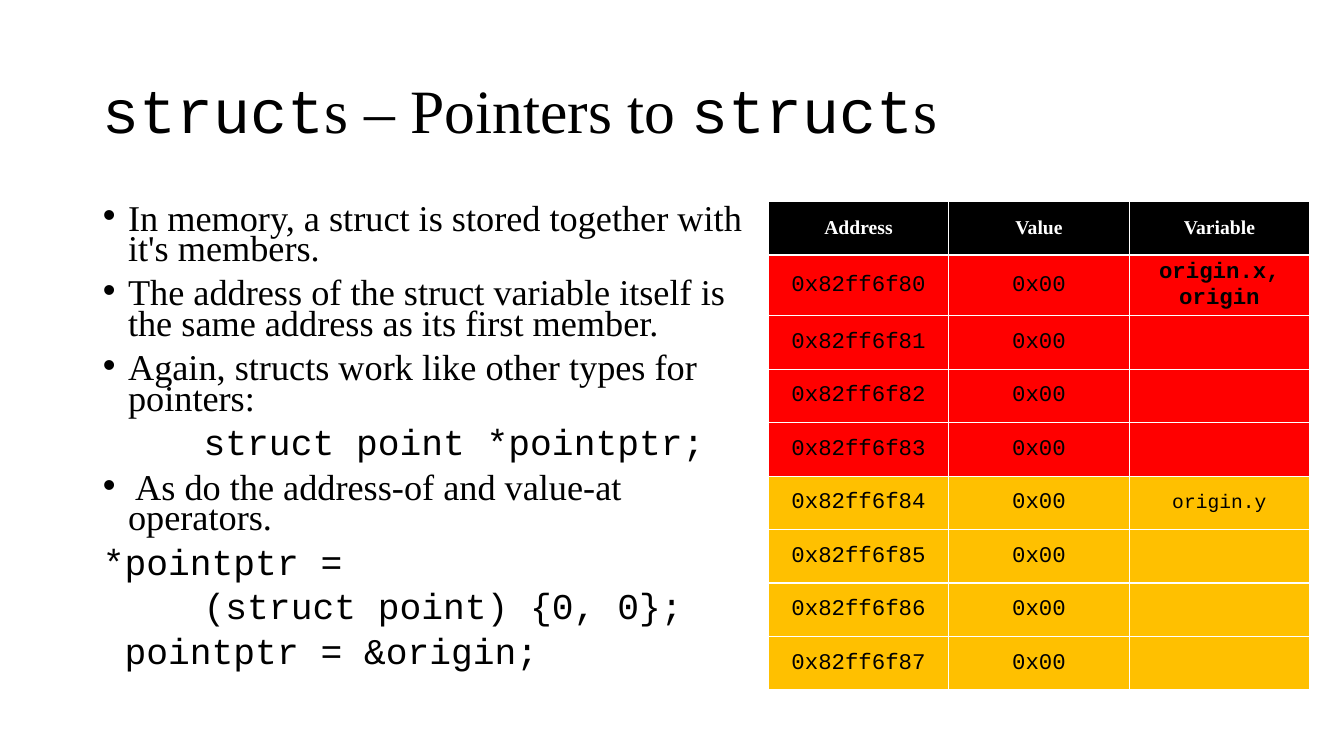
from dataclasses import dataclass

from lxml.etree import SubElement
from pptx import Presentation
from pptx.dml.color import RGBColor
from pptx.enum.text import MSO_ANCHOR, MSO_AUTO_SIZE, PP_ALIGN
from pptx.oxml.ns import qn
from pptx.util import Inches, Pt


@dataclass(frozen=True)
class Theme:
    serif: str = "Times New Roman"
    mono: str = "Courier New"
    black: RGBColor = RGBColor(0, 0, 0)
    white: RGBColor = RGBColor(255, 255, 255)
    red: RGBColor = RGBColor(255, 0, 0)
    amber: RGBColor = RGBColor(255, 192, 0)
    title_size: float = 44
    body_size: float = 25.9
    cell_size: float = 16
    label_size: float = 14


theme = Theme()


def write(paragraph, text, font=theme.mono, size=theme.cell_size, color=theme.black, bold=False):
    run = paragraph.add_run()
    run.text = text
    run.font.name = font
    run.font.size = Pt(size)
    run.font.color.rgb = color
    run.font.bold = bold


def place(shape, left, top, width, height):
    shape.left, shape.top = Inches(left), Inches(top)
    shape.width, shape.height = Inches(width), Inches(height)
    shape.text_frame.auto_size = MSO_AUTO_SIZE.NONE


presentation = Presentation()
presentation.slide_width = Inches(13.33)
presentation.slide_height = Inches(7.5)
slide = presentation.slides.add_slide(presentation.slide_layouts[1])

# Title
title = slide.shapes.title
place(title, 0.92, 0.4, 11.5, 1.45)
title.text_frame.vertical_anchor = MSO_ANCHOR.MIDDLE
heading = title.text_frame.paragraphs[0]
heading.alignment = PP_ALIGN.LEFT
heading.line_spacing = 0.9
for text, font in [("struct", theme.mono), ("s – Pointers to ", theme.serif),
                   ("struct", theme.mono), ("s", theme.serif)]:
    write(heading, text, font=font, size=theme.title_size)

# Bullets and code lines
BODY_LINES = [
    ("In memory, a struct is stored together with it's members.", True),
    ("The address of the struct variable itself is the same address as its first member.", True),
    ("Again, structs work like other types for pointers:", True),
    ("\tstruct point *pointptr;", False),
    (" As do the address-of and value-at operators.", True),
    ("*pointptr =", False),
    ("\t(struct point) {0, 0};", False),
    (" pointptr = &origin;", False),
]
body = slide.placeholders[1]
place(body, 0.92, 2, 6.71, 4.76)
for index, (text, bulleted) in enumerate(BODY_LINES):
    frame = body.text_frame
    paragraph = frame.add_paragraph() if index else frame.paragraphs[0]
    paragraph.line_spacing = 0.7
    paragraph.space_before = Pt(10)
    write(paragraph, text, font=theme.serif if bulleted else theme.mono, size=theme.body_size)
    properties = paragraph._p.get_or_add_pPr()
    indent = Inches(0.25) if bulleted else 0
    properties.set("marL", str(indent))
    properties.set("indent", str(-indent))
    properties.set("defTabSz", str(Inches(1)))
    if bulleted:
        SubElement(properties, qn("a:buFont")).set("typeface", "Arial")
        SubElement(properties, qn("a:buChar")).set("char", "•")
    else:
        SubElement(properties, qn("a:buNone"))

# Memory table: four bytes for each member
HEADERS = ["Address", "Value", "Variable"]
BYTE_COUNT = 8
BYTES_PER_MEMBER = 4
VARIABLES = {0: "origin.x, origin", 4: "origin.y"}
rows = [HEADERS] + [
    [f"0x82ff6f8{byte}", "0x00", VARIABLES.get(byte, "")] for byte in range(BYTE_COUNT)
]
memory = slide.shapes.add_table(
    len(rows), len(HEADERS), Inches(7.62), Inches(2), Inches(5.36), Inches(4.77)
).table
for column in memory.columns:
    column.width = Inches(1.79)
for row_index, values in enumerate(rows):
    memory.rows[row_index].height = Inches(0.53)
    if row_index == 0:
        fill = theme.black
    else:
        fill = theme.red if row_index <= BYTES_PER_MEMBER else theme.amber
    for column_index, text in enumerate(values):
        cell = memory.cell(row_index, column_index)
        cell.fill.solid()
        cell.fill.fore_color.rgb = fill
        cell.vertical_anchor = MSO_ANCHOR.MIDDLE
        paragraph = cell.text_frame.paragraphs[0]
        paragraph.alignment = PP_ALIGN.CENTER
        if row_index == 0:
            write(paragraph, text, font=theme.serif, size=theme.label_size,
                  color=theme.white, bold=True)
        elif text == "origin.y":
            write(paragraph, text, size=theme.label_size)
        elif text:
            write(paragraph, text, bold=column_index == 2)

presentation.save("out.pptx")
